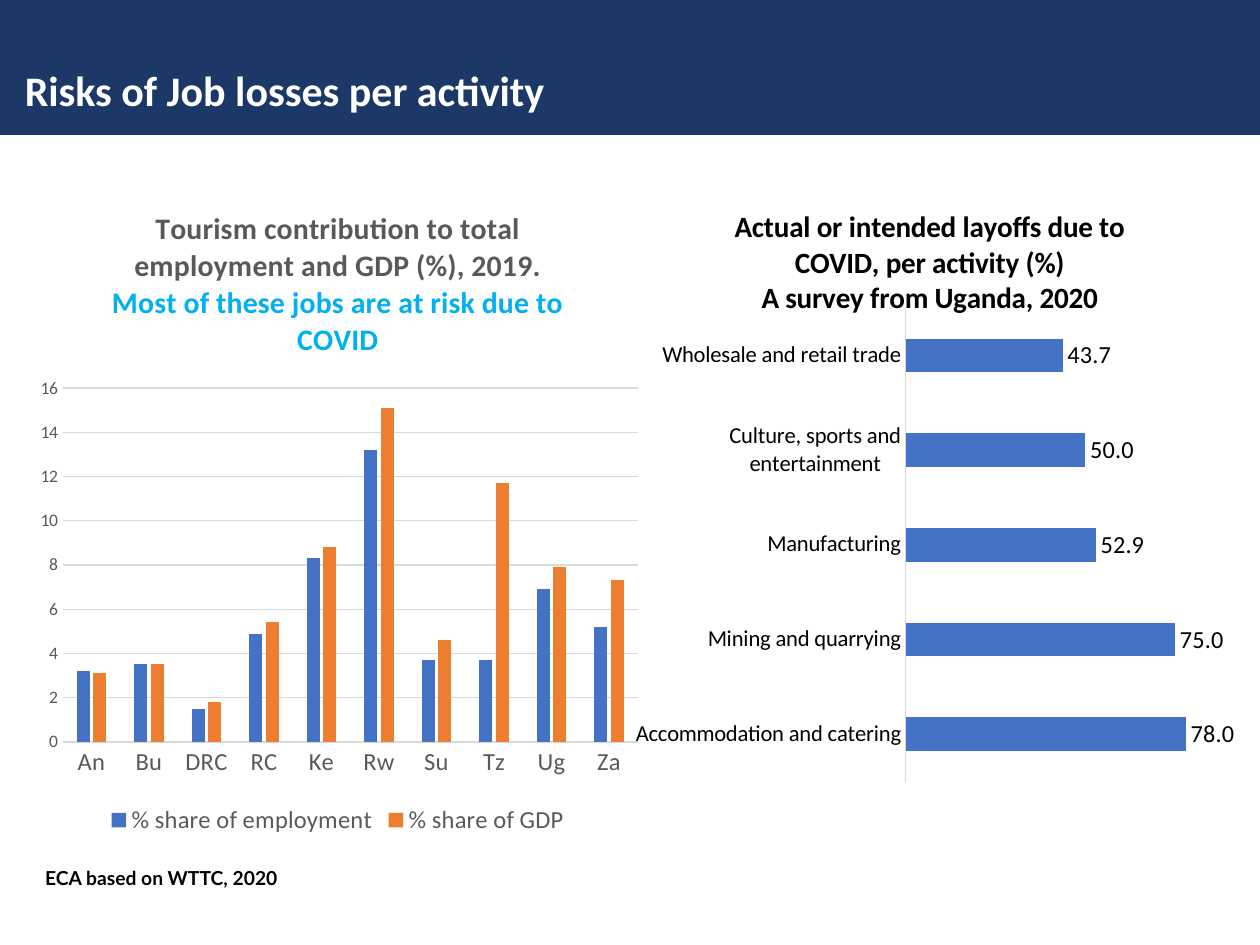
from pptx import Presentation
from pptx.chart.data import CategoryChartData
from pptx.dml.color import RGBColor
from pptx.enum.chart import XL_CHART_TYPE, XL_LABEL_POSITION, XL_LEGEND_POSITION, XL_TICK_MARK
from pptx.enum.shapes import MSO_SHAPE
from pptx.enum.text import MSO_ANCHOR, PP_ALIGN
from pptx.oxml import parse_xml
from pptx.oxml.ns import nsdecls
from pptx.util import Cm, Pt

COLUMN, BAR = XL_CHART_TYPE.COLUMN_CLUSTERED, XL_CHART_TYPE.BAR_CLUSTERED
BOTTOM, OUTSIDE = XL_LEGEND_POSITION.BOTTOM, XL_LABEL_POSITION.OUTSIDE_END
NO_TICK, RECT = XL_TICK_MARK.NONE, MSO_SHAPE.RECTANGLE
MIDDLE, TOP, JUSTIFY = MSO_ANCHOR.MIDDLE, MSO_ANCHOR.TOP, PP_ALIGN.JUSTIFY

NAVY, BLUE, ORANGE, SKY = "1C3867", "4472C4", "ED7D31", "00B0F0"
GREY, PALE, BLACK, WHITE = "595959", "D9D9D9", "000000", "FFFFFF"

COUNTRIES = ["An", "Bu", "DRC", "RC", "Ke", "Rw", "Su", "Tz", "Ug", "Za"]
TOURISM = {
    "% share of employment": [3.2, 3.5, 1.5, 4.9, 8.3, 13.2, 3.7, 3.7, 6.9, 5.2],
    "% share of GDP": [3.1, 3.5, 1.8, 5.4, 8.8, 15.1, 4.6, 11.7, 7.9, 7.3],
}
ACTIVITIES = ["Accommodation and catering", "Mining and quarrying", "Manufacturing",
              "Culture, sports and entertainment", "Wholesale and retail trade"]
LAYOFFS = {"Series 1": [78, 75, 52.9, 50, 43.7]}


def rgb(value):
    """Turn a hex string into a colour."""
    return RGBColor.from_string(value)


def style_font(font, size, color, bold=False, name="Calibri"):
    """Format a font."""
    font.size, font.bold, font.name = Pt(size), bold, name
    font.color.rgb = rgb(color)


def add_text(slide, box, text, inset=None, anchor=TOP, align=None, spacing=None, **fmt):
    """Add a wrapped one-paragraph text box."""
    tf = slide.shapes.add_textbox(*map(Cm, box)).text_frame
    tf.word_wrap, tf.vertical_anchor = True, anchor
    if inset is not None:
        tf.margin_left = tf.margin_right = tf.margin_top = tf.margin_bottom = Cm(inset)
    p = tf.paragraphs[0]
    p.alignment, p.line_spacing = align, spacing
    r = p.add_run()
    r.text = text
    style_font(r.font, **fmt)


def add_header(slide, box):
    """Draw the title band with its heading."""
    x, y, w, h = box
    sp = slide.shapes.add_shape(RECT, *map(Cm, box))
    sp.shadow.inherit = False
    sp.fill.solid()
    sp.fill.fore_color.rgb = rgb(NAVY)
    sp.line.fill.background()
    add_text(slide, (x + 0.5, y + 0.71, w - 0.99, 2.21), "Risks of Job losses per activity",
             inset=0, anchor=MIDDLE, size=24, color=WHITE, bold=True)


def set_title(chart, lines, size):
    """Write the chart title from pairs of text and colour."""
    tf = chart.chart_title.text_frame
    for i, (text, color) in enumerate(lines):
        p = tf.paragraphs[0] if i == 0 else tf.add_paragraph()
        r = p.add_run()
        r.text = text
        style_font(r.font, size, color, bold=True)
    chart.chart_title.include_in_layout = False


def set_plot_box(chart, x, y, w, h):
    """Fix the inner plot area as fractions of the chart."""
    area = chart._chartSpace.chart.plotArea
    for old in area.findall("{*}layout"):
        area.remove(old)
    area.insert(0, parse_xml(
        f'<c:layout {nsdecls("c")}><c:manualLayout><c:layoutTarget val="inner"/>'
        f'<c:xMode val="edge"/><c:yMode val="edge"/><c:x val="{x}"/><c:y val="{y}"/>'
        f'<c:w val="{w}"/><c:h val="{h}"/></c:manualLayout></c:layout>'))


def add_bars(slide, box, kind, cats, series, colors, gap, axis_font, top):
    """Add a clustered chart with the shared series and axis look."""
    data = CategoryChartData()
    data.categories = cats
    for name, values in series.items():
        data.add_series(name, values)
    chart = slide.shapes.add_chart(kind, *map(Cm, box), data).chart
    style_font(chart.font, 14, BLACK)
    plot = chart.plots[0]
    plot.gap_width, plot.vary_by_categories = gap, False
    for ser, color in zip(plot.series, colors):
        ser.format.fill.solid()
        ser.format.fill.fore_color.rgb = rgb(color)
    cat, val = chart.category_axis, chart.value_axis
    cat.major_tick_mark = val.major_tick_mark = NO_TICK
    style_font(cat.tick_labels.font, *axis_font)
    cat.format.line.color.rgb, cat.format.line.width = rgb(PALE), Pt(0.75)
    val.minimum_scale, val.maximum_scale = 0, top
    return chart


def add_tourism_chart(slide, box):
    """Add the column chart of tourism shares by country."""
    chart = add_bars(slide, box, COLUMN, COUNTRIES, TOURISM, (BLUE, ORANGE), 219, (14, GREY), 16)
    set_title(chart, [("Tourism contribution to total employment and GDP (%), 2019.", GREY),
                      ("Most of these jobs are at risk due to COVID", SKY)], 17)
    set_plot_box(chart, 0.06, 0.31, 0.92, 0.54)
    chart.plots[0].overlap = -27
    val = chart.value_axis
    val.major_unit = 2
    style_font(val.tick_labels.font, 10, GREY)
    val.format.line.fill.background()
    grid = val.major_gridlines.format.line
    grid.color.rgb, grid.width = rgb(PALE), Pt(0.75)
    chart.has_legend = True
    chart.legend.position, chart.legend.include_in_layout = BOTTOM, False
    style_font(chart.legend.font, 14, GREY)


def add_layoff_chart(slide, box):
    """Add the bar chart of layoffs by activity."""
    chart = add_bars(slide, box, BAR, ACTIVITIES, LAYOFFS, (BLUE,), 182, (13, BLACK), 90)
    set_title(chart, [("Actual or intended layoffs due to COVID, per activity (%)", BLACK),
                      ("A survey from Uganda, 2020", BLACK)], 16.8)
    set_plot_box(chart, 0.46, 0.2, 0.54, 0.77)
    chart.has_legend = False
    chart.value_axis.visible = chart.value_axis.has_major_gridlines = False
    plot = chart.plots[0]
    plot.has_data_labels = True
    labels = plot.data_labels
    labels.show_value, labels.position = True, OUTSIDE
    labels.number_format, labels.number_format_is_linked = "0.0", False
    style_font(labels.font, 14, BLACK)


def main():
    """Build the slide."""
    prs = Presentation()
    prs.slide_width, prs.slide_height = Cm(25.4), Cm(19.05)
    slide = prs.slides.add_slide(prs.slide_layouts[6])
    add_header(slide, (0, 0, 25.4, 2.72))
    add_text(slide, (0.66, 17.3, 14.35, 0.76), "ECA based on WTTC, 2020", align=JUSTIFY,
             spacing=1.07, size=11, color=BLACK, bold=True, name="Lato")
    add_tourism_chart(slide, (0.51, 3.73, 12.6, 13.21))
    add_layoff_chart(slide, (12.7, 3.73, 12.19, 12.4))
    prs.save("out.pptx")


if __name__ == "__main__":
    main()
